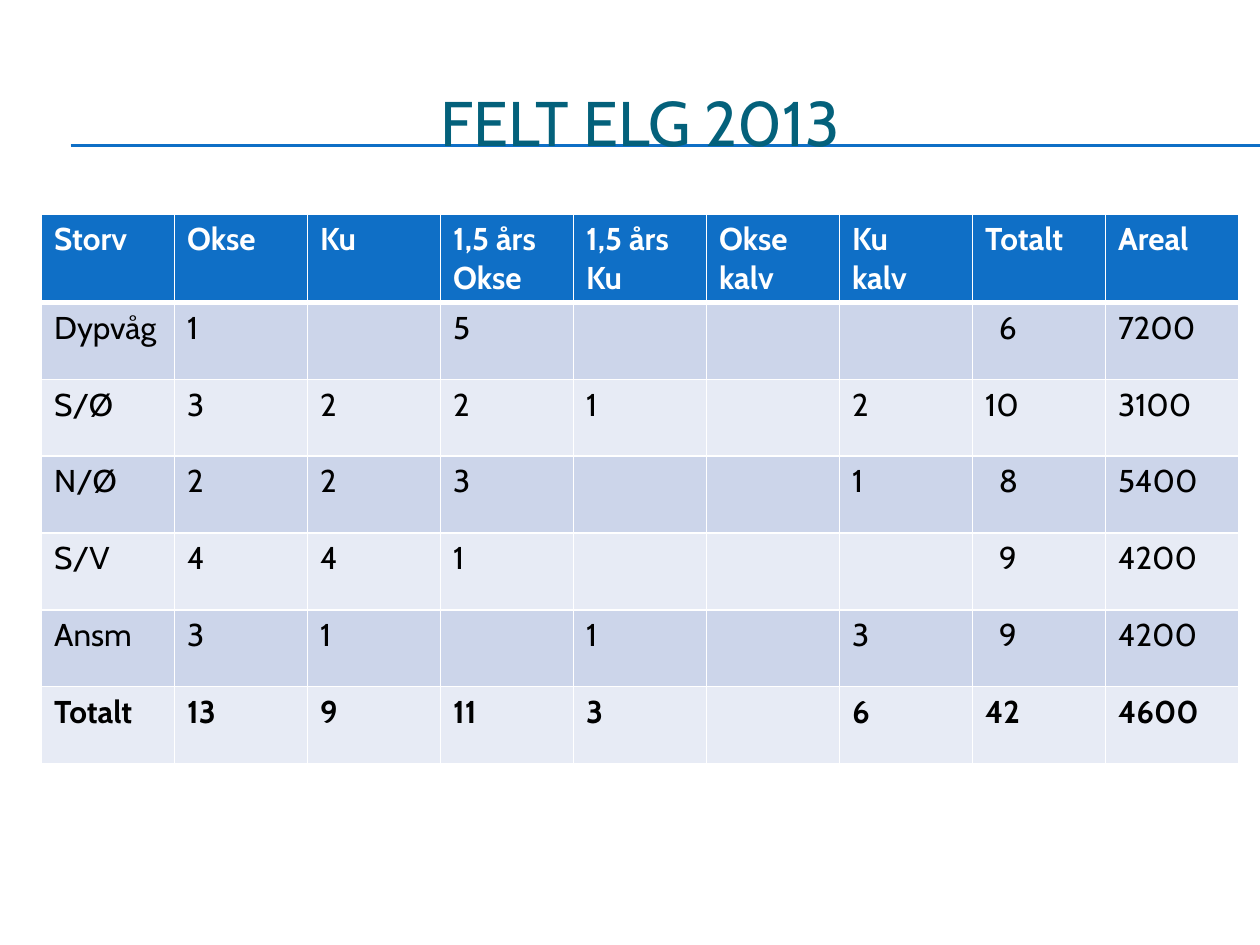
from lxml.etree import SubElement
from pptx import Presentation
from pptx.dml.color import RGBColor
from pptx.enum.shapes import MSO_CONNECTOR
from pptx.enum.text import MSO_ANCHOR, PP_ALIGN
from pptx.oxml.ns import qn
from pptx.util import Inches, Pt

FONT = "Cabin"
BLUE, TEAL, WHITE, BLACK = "0F6FC6", "04617B", "FFFFFF", "000000"
BANDS = ("CCD5EA", "E7EBF5")
TOTAL_COL = 7
ROWS = [
    ["Storv", "Okse", "Ku", "1,5 års\nOkse", "1,5 års\nKu", "Okse\nkalv", "Ku\nkalv", "Totalt", "Areal"],
    ["Dypvåg", "1", "", "5", "", "", "", "6", "7200"],
    ["S/Ø", "3", "2", "2", "1", "", "2", "10", "3100"],
    ["N/Ø", "2", "2", "3", "", "", "1", "8", "5400"],
    ["S/V", "4", "4", "1", "", "", "", "9", "4200"],
    ["Ansm", "3", "1", "", "1", "", "3", "9", "4200"],
    ["Totalt", "13", "9", "11", "3", "", "6", "42", "4600"],
]


def rgb(color):
    return RGBColor.from_string(color)


def write(tf, text, size=18, color=BLACK, bold=False, align=PP_ALIGN.LEFT):
    for i, line in enumerate(text.split("\n")):
        p = tf.paragraphs[0] if i == 0 else tf.add_paragraph()
        p.alignment = align
        p.font.size = Pt(size)
        if line:
            r = p.add_run()
            r.text = line
            r.font.name = FONT
            r.font.size = Pt(size)
            r.font.bold = bold
            r.font.color.rgb = rgb(color)


def add_rule(s, x1, x2, y):
    line = s.shapes.add_connector(MSO_CONNECTOR.STRAIGHT, Inches(x1), Inches(y), Inches(x2), Inches(y))
    line.line.color.rgb = rgb(BLUE)
    line.line.width = Pt(0.75)
    SubElement(line._element.spPr, qn("a:effectLst"))


def add_title(s, x, y, w, h, text):
    for offset in (0.65, 0.66):
        add_rule(s, x + 0.23, 10, y + offset)
    sp = s.shapes.add_textbox(Inches(x), Inches(y), Inches(w), Inches(h))
    tf = sp.text_frame
    tf.word_wrap = True
    tf.vertical_anchor = MSO_ANCHOR.MIDDLE
    write(tf, text, size=36, color=TEAL, align=PP_ALIGN.CENTER)


def set_borders(cell, **widths):
    tc_pr = cell._tc.get_or_add_tcPr()
    for side, width in widths.items():
        ln = SubElement(tc_pr, qn(f"a:ln{side}"), w=str(Pt(width)))
        fill = SubElement(ln, qn("a:solidFill"))
        SubElement(fill, qn("a:srgbClr"), val=WHITE)


def add_quota_table(s, x, y, w, row_h, rows):
    n_cols = len(rows[0])
    frame = s.shapes.add_table(len(rows), n_cols, Inches(x), Inches(y), Inches(w), Inches(row_h * len(rows)))
    table = frame.table
    for col in table.columns:
        col.width = Inches(w / n_cols)
    for i, values in enumerate(rows):
        table.rows[i].height = Inches(row_h)
        header = i == 0
        for j, value in enumerate(values):
            cell = table.cell(i, j)
            set_borders(cell, L=1, R=1, T=3 if i == 1 else 1, B=3 if header else 1)
            cell.fill.solid()
            cell.fill.fore_color.rgb = rgb(BLUE if header else BANDS[(i - 1) % 2])
            if j == TOTAL_COL and len(value) == 1:
                cell.margin_left = Inches(0.21)
            write(cell.text_frame, value, color=WHITE if header else BLACK,
                  bold=header or i == len(rows) - 1)


def main():
    prs = Presentation()
    prs.slide_width, prs.slide_height = Inches(10), Inches(7.5)
    s = prs.slides.add_slide(prs.slide_layouts[6])
    add_title(s, 0.33, 0.5, 9.5, 0.92, "FELT ELG 2013")
    add_quota_table(s, 0.33, 1.7, 9.5, 0.61, ROWS)
    prs.save("out.pptx")


if __name__ == "__main__":
    main()
